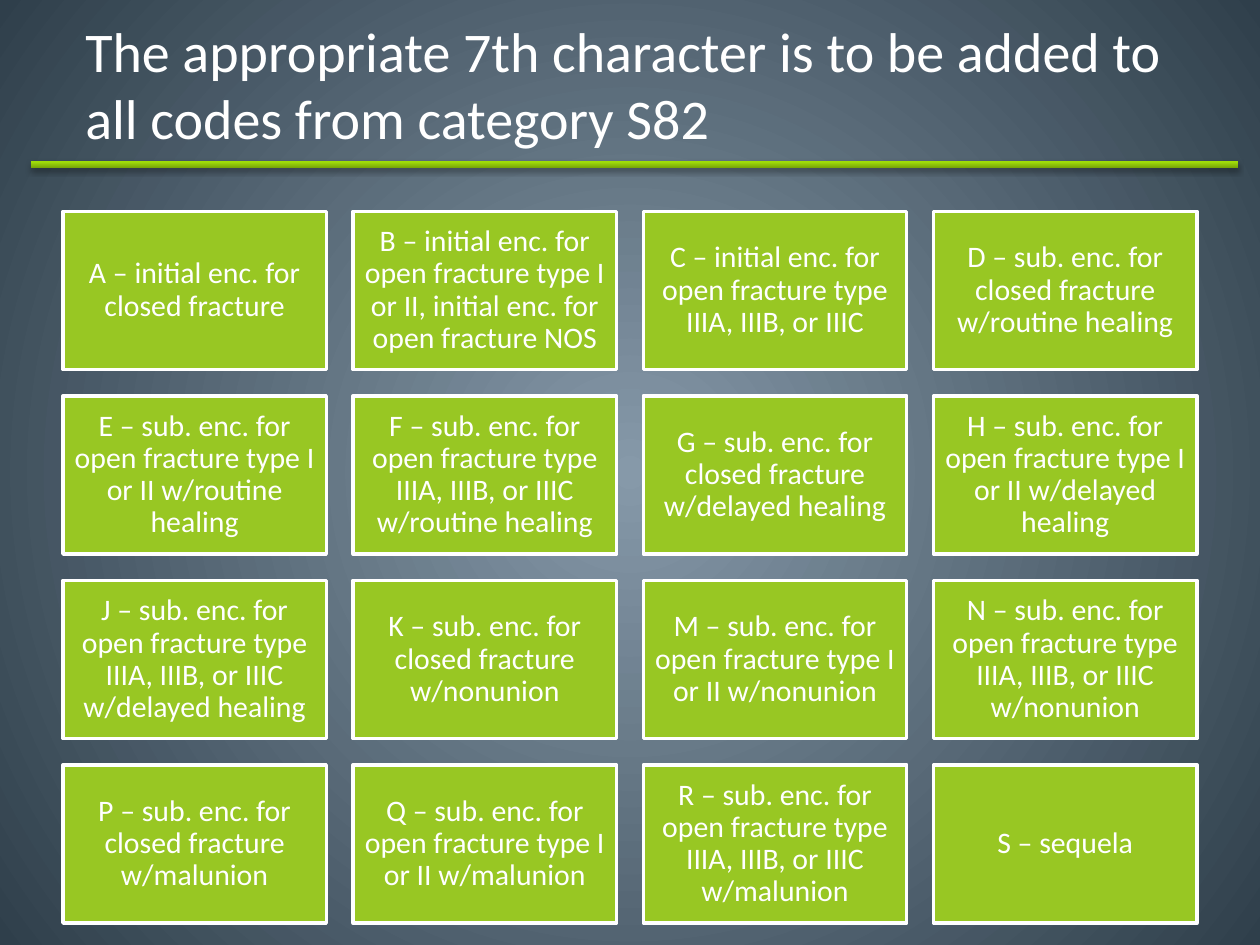
"""Build a slide listing the 7th characters for category S82 codes."""
from lxml.etree import SubElement
from pptx import Presentation
from pptx.dml.color import RGBColor
from pptx.enum.shapes import MSO_SHAPE
from pptx.enum.text import MSO_ANCHOR, PP_ALIGN
from pptx.oxml.ns import qn
from pptx.util import Cm, Pt

WHITE = RGBColor(0xFF, 0xFF, 0xFF)
GREEN = RGBColor(0x98, 0xC7, 0x23)
BAR_DARK = RGBColor(0x79, 0xA7, 0x08)
BAR_MID = RGBColor(0x9D, 0xD9, 0x0A)
BAR_LIGHT = RGBColor(0xA0, 0xDE, 0x06)
SLATE_LIGHT = RGBColor(0x86, 0x99, 0xA9)
SLATE_DARK = RGBColor(0x2F, 0x3F, 0x4B)

CHARACTERS = [
    "A – initial enc. for closed fracture",
    "B – initial enc. for open fracture type I or II, initial enc. for open fracture NOS",
    "C – initial enc. for open fracture type IIIA, IIIB, or IIIC",
    "D – sub. enc. for closed fracture w/routine healing",
    "E – sub. enc. for open fracture type I or II w/routine healing",
    "F – sub. enc. for open fracture type IIIA, IIIB, or IIIC w/routine healing",
    "G – sub. enc. for closed fracture w/delayed healing",
    "H – sub. enc. for open fracture type I or II w/delayed healing",
    "J – sub. enc. for open fracture type IIIA, IIIB, or IIIC w/delayed healing",
    "K – sub. enc. for closed fracture w/nonunion",
    "M – sub. enc. for open fracture type I or II w/nonunion",
    "N – sub. enc. for open fracture type IIIA, IIIB, or IIIC w/nonunion",
    "P – sub. enc. for closed fracture w/malunion",
    "Q – sub. enc. for open fracture type I or II w/malunion",
    "R – sub. enc. for open fracture type IIIA, IIIB, or IIIC w/malunion",
    "S – sequela",
]
COLUMNS = 4


def set_gradient(owner, element, stops):
    owner.fill.gradient()
    gradient = next(element.iter(qn("a:gradFill")))
    for child in list(gradient):
        gradient.remove(child)
    stop_list = SubElement(gradient, qn("a:gsLst"))
    for percent, color in stops:
        stop = SubElement(stop_list, qn("a:gs"), pos=str(percent * 1000))
        SubElement(stop, qn("a:srgbClr"), val=str(color))
    return gradient


def write_text(box, text, size):
    box.text_frame.word_wrap = True
    box.text_frame.text = text
    para = box.text_frame.paragraphs[0]
    font = para.runs[0].font
    font.name = "Calibri"
    font.size = Pt(size)
    font.color.rgb = WHITE
    return para


deck = Presentation()
deck.slide_width = Cm(25.4)
deck.slide_height = Cm(19.05)
page = deck.slides.add_slide(deck.slide_layouts[6])

backdrop = set_gradient(page.background, page.element, [(0, SLATE_LIGHT), (100, SLATE_DARK)])
circle = SubElement(backdrop, qn("a:path"), path="circle")
SubElement(circle, qn("a:fillToRect"), l="50000", t="50000", r="50000", b="50000")

for index, text in enumerate(CHARACTERS):
    row, column = divmod(index, COLUMNS)
    box = page.shapes.add_shape(
        MSO_SHAPE.RECTANGLE,
        Cm(1.27 + 5.85 * column), Cm(4.26 + 3.72 * row), Cm(5.31), Cm(3.19),
    )
    box.shadow.inherit = False
    box.fill.solid()
    box.fill.fore_color.rgb = GREEN
    box.line.color.rgb = WHITE
    box.line.width = Pt(2)
    frame = box.text_frame
    frame.vertical_anchor = MSO_ANCHOR.MIDDLE
    frame.margin_left = frame.margin_right = Cm(0.18)
    frame.margin_top = frame.margin_bottom = Cm(0.18)
    para = write_text(box, text, 17)
    para.alignment = PP_ALIGN.CENTER
    para.line_spacing = 0.9

bar = page.shapes.add_shape(MSO_SHAPE.RECTANGLE, Cm(0.63), Cm(3.25), Cm(24.33), Cm(0.13))
bar.line.fill.background()
bar.shadow.inherit = False
bar_fill = set_gradient(bar, bar.element, [(0, BAR_DARK), (80, BAR_MID), (100, BAR_LIGHT)])
SubElement(bar_fill, qn("a:lin"), ang="16200000", scaled="0")
effects = next(bar.element.iter(qn("a:effectLst")))
shadow = SubElement(
    effects, qn("a:outerShdw"),
    blurRad=str(Pt(3.1)), dist=str(Pt(1.8)), dir="5400000", rotWithShape="0",
)
shadow_color = SubElement(shadow, qn("a:srgbClr"), val="000000")
SubElement(shadow_color, qn("a:alpha"), val="35000")

title = page.shapes.add_textbox(Cm(1.47), Cm(0.2), Cm(23.5), Cm(3))
write_text(title, "The appropriate 7th character is to be added to all codes from category S82", 32)

deck.save("out.pptx")
